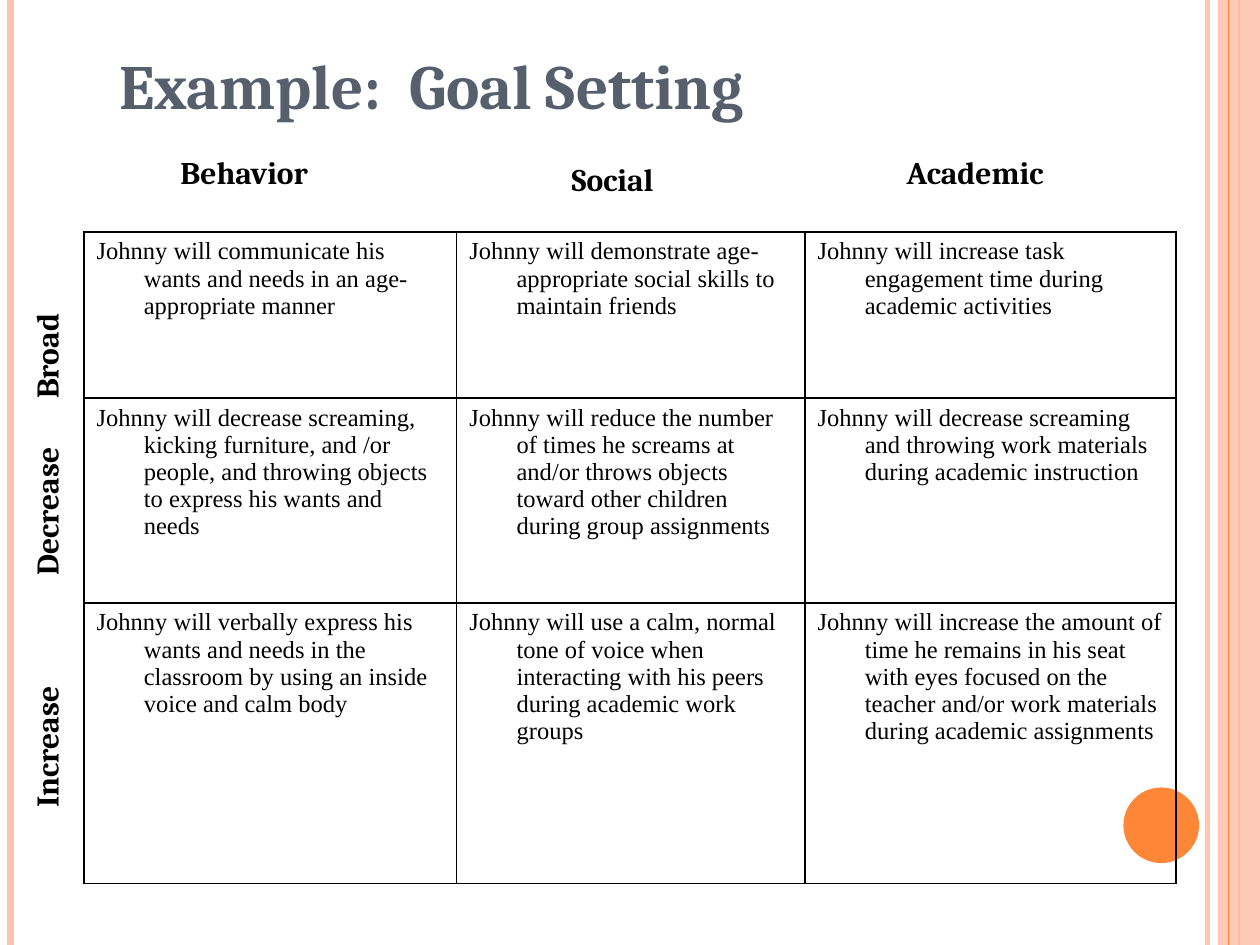
from lxml import etree
from pptx import Presentation
from pptx.dml.color import RGBColor
from pptx.enum.shapes import MSO_CONNECTOR, MSO_SHAPE
from pptx.enum.text import MSO_ANCHOR, PP_ALIGN
from pptx.oxml.ns import qn
from pptx.util import Pt

STRAIGHT = MSO_CONNECTOR.STRAIGHT
RECTANGLE, OVAL = MSO_SHAPE.RECTANGLE, MSO_SHAPE.OVAL
TOP, MIDDLE = MSO_ANCHOR.TOP, MSO_ANCHOR.MIDDLE
LEFT = PP_ALIGN.LEFT

PAGE_WIDTH, PAGE_HEIGHT = 720, 540
COLORS = {"peach": "FEC3AE", "orange": "FE8637", "title": "575F6D",
          "text": "000000", "paper": "FFFFFF"}
HEADING_FONT, BODY_FONT = "Cambria", "Times New Roman"

COLUMN_WIDTHS = [213, 199, 212]
ROW_HEIGHTS = [95, 117, 160.5]
GOALS = [
    ["Johnny will communicate his wants and needs in an age-appropriate manner",
     "Johnny will demonstrate age-appropriate social skills to maintain friends",
     "Johnny will increase task engagement time during academic activities"],
    ["Johnny will decrease screaming, kicking furniture, and /or people, and "
     "throwing objects to express his wants and needs",
     "Johnny will reduce the number of times he screams at and/or throws objects "
     "toward other children during group assignments",
     "Johnny will decrease screaming and throwing work materials during "
     "academic instruction"],
    ["Johnny will verbally express his wants and needs in the classroom by using "
     "an inside voice and calm body",
     "Johnny will use a calm, normal tone of voice when interacting with his "
     "peers during academic work groups",
     "Johnny will increase the amount of time he remains in his seat with eyes "
     "focused on the teacher and/or work materials during academic assignments"],
]
# Each label: text, left, top, width, height
COLUMN_LABELS = [("Behavior", 96, 84, 106.5, 29), ("Social", 319.5, 88, 106.5, 29),
                 ("Academic", 511, 84, 106.5, 29)]
ROW_LABELS = [("Decrease", 12, 235.5, 27.5, 93.5), ("Increase", 12, 366, 27.5, 95.5),
              ("Broad", 12, 138, 30, 90)]


def color(name):
    return RGBColor.from_string(COLORS[name])


def set_alpha(element, percent):
    """Make the first solid colour inside the element partly transparent."""
    solid = next(element.iter(qn("a:srgbClr")))
    etree.SubElement(solid, qn("a:alpha")).set("val", str(percent * 1000))


def style_text(paragraph, font, size, name="text", bold=False):
    paragraph.alignment = LEFT
    paragraph.font.name = font
    paragraph.font.size = Pt(size)
    paragraph.font.bold = bold
    paragraph.font.color.rgb = color(name)


def add_stripe(page, x, top, height, name, width, alpha=None):
    stripe = page.shapes.add_connector(STRAIGHT, Pt(x), Pt(top), Pt(x), Pt(top + height))
    stripe.line.color.rgb = color(name)
    stripe.line.width = Pt(width)
    properties = stripe._element.spPr
    if alpha:
        set_alpha(properties, alpha)
    etree.SubElement(properties, qn("a:effectLst"))


def add_plain_shape(page, kind, left, top, width, height, fill):
    shape = page.shapes.add_shape(kind, Pt(left), Pt(top), Pt(width), Pt(height))
    shape.shadow.inherit = False
    shape.fill.solid()
    shape.fill.fore_color.rgb = color(fill)
    shape.line.fill.background()
    return shape


def add_decoration(page, left, top, width, height):
    right = left + width
    add_stripe(page, right - 30, top, height, "peach", 3, 93)
    add_stripe(page, left + 6, top, height, "peach", 4.5)
    add_stripe(page, right - 12, top, height, "orange", 1.5)
    band = add_plain_shape(page, RECTANGLE, right - 24, top, 24, height, "peach")
    set_alpha(band._element.spPr, 87)
    add_stripe(page, right - 18, top, height, "orange", 0.75)
    add_plain_shape(page, OVAL, right - 78, top + height - 90, 43.2, 43.2, "orange")


def place_title(page, left, top, width, height):
    title = page.shapes.title
    title.left, title.top, title.width, title.height = map(Pt, (left, top, width, height))
    frame = title.text_frame
    frame.text = "Example:  Goal Setting"
    frame.word_wrap = True
    frame.vertical_anchor = MIDDLE
    style_text(frame.paragraphs[0], HEADING_FONT, 36, "title", bold=True)


def add_row_label(page, text, left, top, width, height):
    label = add_plain_shape(page, RECTANGLE, left, top, width, height, "paper")
    frame = label.text_frame
    frame.text = text
    frame.word_wrap = True
    frame.vertical_anchor = TOP
    frame.margin_left, frame.margin_top = Pt(7.2), Pt(5)
    frame.margin_right = frame.margin_bottom = Pt(0)
    # Text reads from bottom to top
    label._element.txBody.find(qn("a:bodyPr")).set("vert", "vert270")
    style_text(frame.paragraphs[0], HEADING_FONT, 18, bold=True)


def add_column_label(page, text, left, top, width, height):
    box = page.shapes.add_textbox(Pt(left), Pt(top), Pt(width), Pt(height))
    frame = box.text_frame
    frame.text = text
    frame.word_wrap = True
    style_text(frame.paragraphs[0], HEADING_FONT, 18, bold=True)


def add_borders(cell, width):
    properties = cell._tc.get_or_add_tcPr()
    for position, side in enumerate(("a:lnL", "a:lnR", "a:lnT", "a:lnB")):
        border = etree.Element(qn(side), w=str(Pt(width)))
        fill = etree.SubElement(border, qn("a:solidFill"))
        etree.SubElement(fill, qn("a:srgbClr"), val=COLORS["text"])
        properties.insert(position, border)


def fill_cell(cell, text):
    cell.text = text
    cell.fill.background()
    add_borders(cell, 1)
    paragraph = cell.text_frame.paragraphs[0]
    style_text(paragraph, BODY_FONT, 14)
    # Hanging indent
    indents = paragraph._p.get_or_add_pPr()
    indents.set("marL", str(Pt(27)))
    indents.set("indent", str(-Pt(27)))


def add_goal_table(page, left, top):
    table = page.shapes.add_table(
        len(ROW_HEIGHTS), len(COLUMN_WIDTHS), Pt(left), Pt(top),
        Pt(sum(COLUMN_WIDTHS)), Pt(sum(ROW_HEIGHTS))).table
    table.first_row = table.horz_banding = False
    for column, width in zip(table.columns, COLUMN_WIDTHS):
        column.width = Pt(width)
    for row, height, texts in zip(table.rows, ROW_HEIGHTS, GOALS):
        row.height = Pt(height)
        for cell, text in zip(row.cells, texts):
            fill_cell(cell, text)


def main():
    deck = Presentation()
    deck.slide_width, deck.slide_height = Pt(PAGE_WIDTH), Pt(PAGE_HEIGHT)
    page = deck.slides.add_slide(deck.slide_layouts[5])
    add_decoration(page, 0, 0, PAGE_WIDTH, PAGE_HEIGHT)
    place_title(page, 61, 23, 624, 50.5)
    for label in ROW_LABELS:
        add_row_label(page, *label)
    add_goal_table(page, 48, 132.5)
    for label in COLUMN_LABELS:
        add_column_label(page, *label)
    deck.save("out.pptx")


if __name__ == "__main__":
    main()
